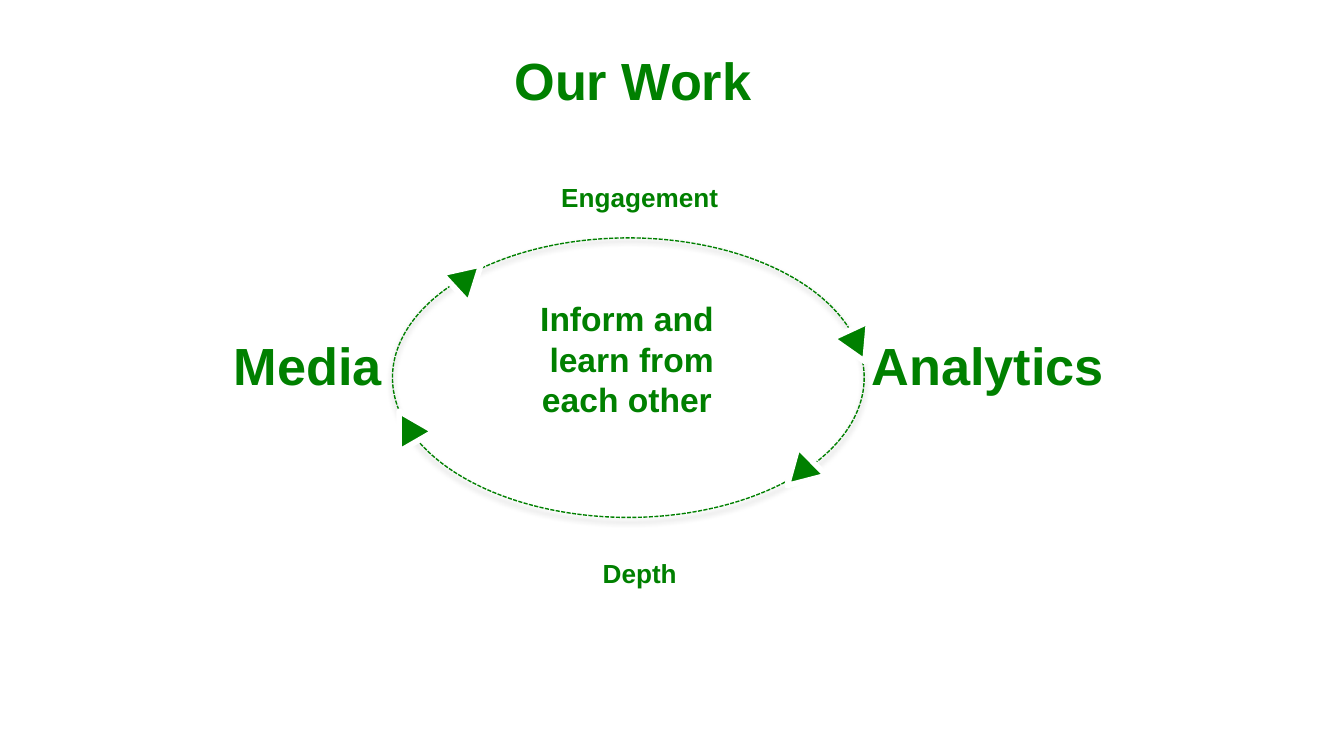
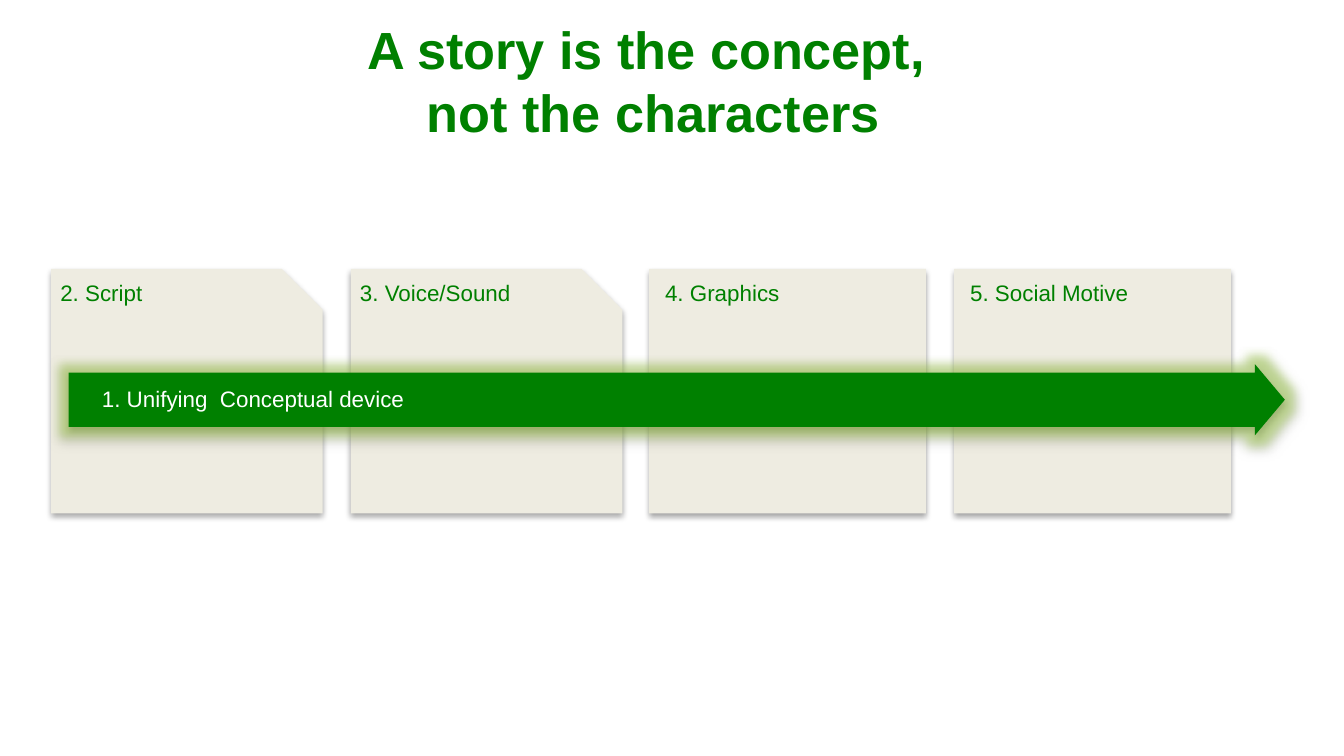
import pptx
import pptx.util
import pptx.dml.color
import pptx.enum.dml
import pptx.enum.shapes
import pptx.enum.text
import pptx.oxml
import pptx.oxml.ns

Inches = pptx.util.Inches
Pt = pptx.util.Pt
RGBColor = pptx.dml.color.RGBColor
SHAPE = pptx.enum.shapes.MSO_SHAPE
ALIGN = pptx.enum.text.PP_ALIGN
ANCHOR = pptx.enum.text.MSO_ANCHOR
AUTO = pptx.enum.text.MSO_AUTO_SIZE

GREEN = RGBColor(0x00, 0x80, 0x00)
WHITE = RGBColor(0xFF, 0xFF, 0xFF)
BEIGE = RGBColor(0xEE, 0xEC, 0xE1)
FONT = "Arial"
TITLE_SIZE = 28
LABEL_W, LABEL_H = 3.12, 1.21

WORK_TITLE = "Our Work"
WORK_LABELS = [
    ("Media", 0.73, 2.22, TITLE_SIZE, 0.28),
    ("Analytics", 5.79, 2.22, TITLE_SIZE, 0.28),
    ("Engagement", 3.2, 0.86, 14, 0.05),
    ("Depth", 3.2, 3.66, 14, 0.05),
]
CENTRE_TEXT = "Inform and \nlearn from\neach other "
CYCLE_HEADS = [
    (5.82, 3.32, 345.5),
    (3.31, 2.0, 167.4),
    (2.95, 3.08, 90),
    (6.17, 2.4, 275.1),
]

STORY_TITLE = "A story is the concept, \nnot the characters"
CARD_STYLES = {
    "snipped": (SHAPE.SNIP_1_RECTANGLE, 2.02, -0.03),
    "plain": (SHAPE.RECTANGLE, 2.06, 0.02),
}
CARDS = [
    ("2. Script", 0.38, "snipped"),
    ("3. Voice/Sound", 2.61, "snipped"),
    ("4. Graphics", 4.83, "plain"),
    ("5. Social Motive", 7.1, "plain"),
]
DEVICE = "1. Unifying  Conceptual device"

SHADOW = ('<a:outerShdw blurRad="40000" dist="23000" dir="5400000" rotWithShape="0">'
          '<a:srgbClr val="000000"><a:alpha val="35000"/></a:srgbClr></a:outerShdw>')
GLOW = ('<a:glow rad="139700"><a:srgbClr val="9BCB3C">'
        '<a:alpha val="45000"/></a:srgbClr></a:glow>')


def add_effects(shape, effects):
    shape.shadow.inherit = False
    effect_list = shape._element.spPr.find(pptx.oxml.ns.qn("a:effectLst"))
    namespace = pptx.oxml.ns.nsdecls("a")
    for effect in pptx.oxml.parse_xml(f"<a:effectLst {namespace}>{effects}</a:effectLst>"):
        effect_list.append(effect)


def add_figure(slide, preset, box, fill=None, effects=""):
    figure = slide.shapes.add_shape(preset, *map(Inches, box))
    if fill is None:
        figure.fill.background()
    else:
        figure.fill.solid()
        figure.fill.fore_color.rgb = fill
    figure.line.fill.background()
    add_effects(figure, effects)
    return figure


def write(shape, text, size, color=GREEN, bold=False, align=ALIGN.LEFT,
          anchor=ANCHOR.TOP, bottom=0.05, auto=AUTO.NONE):
    frame = shape.text_frame
    frame.text = text
    frame.word_wrap = True
    frame.auto_size = auto
    frame.vertical_anchor = anchor
    frame.margin_left = frame.margin_right = Inches(0.1)
    frame.margin_top, frame.margin_bottom = Inches(0.05), Inches(bottom)
    for paragraph in frame.paragraphs:
        paragraph.alignment = align
        for run in paragraph.runs:
            run.font.name = FONT
            run.font.size = Pt(size)
            run.font.bold = bold
            run.font.color.rgb = color


def add_text(slide, text, box, size, **style):
    write(slide.shapes.add_textbox(*map(Inches, box)), text, size, **style)


def add_titled_slide(prs, text, left, width):
    slide = prs.slides.add_slide(prs.slide_layouts[5])
    title = slide.shapes.title
    title.left, title.top = Inches(left), Inches(-0.01)
    title.width, title.height = Inches(width), Inches(LABEL_H)
    write(title, text, TITLE_SIZE, bold=True, align=ALIGN.CENTER, anchor=ANCHOR.MIDDLE)
    return slide


def build_work(prs):
    slide = add_titled_slide(prs, WORK_TITLE, 3.15, LABEL_W)
    for label, left, top, size, bottom in WORK_LABELS:
        add_text(slide, label, (left, top, LABEL_W, LABEL_H), size, bold=True,
                 align=ALIGN.CENTER, anchor=ANCHOR.MIDDLE, bottom=bottom)
    cycle = add_figure(slide, SHAPE.OVAL, (2.92, 1.77, 3.51, 2.08), effects=SHADOW)
    cycle.line.color.rgb = GREEN
    cycle.line.width = Pt(0.75)
    cycle.line.dash_style = pptx.enum.dml.MSO_LINE.SQUARE_DOT
    for left, top, angle in CYCLE_HEADS:
        head = add_figure(slide, SHAPE.ISOSCELES_TRIANGLE, (left, top, 0.3, 0.26), GREEN)
        head.rotation = angle
        head.line.color.rgb = WHITE
        head.line.width = Pt(3)
    add_text(slide, CENTRE_TEXT, (3.13, 2.17, 3.14, 1.01), 18, bold=True,
             align=ALIGN.CENTER, auto=AUTO.SHAPE_TO_FIT_TEXT)


def build_story(prs):
    slide = add_titled_slide(prs, STORY_TITLE, 1.51, 6.7)
    for label, left, style in CARDS:
        preset, width, offset = CARD_STYLES[style]
        add_figure(slide, preset, (left, 2, width, 1.82), BEIGE, SHADOW)
        add_text(slide, label, (left + offset, 2.03, 2.05, 0.3), 12,
                 auto=AUTO.SHAPE_TO_FIT_TEXT)
    arrow = add_figure(slide, SHAPE.RIGHT_ARROW, (0.51, 2.71, 9.05, 0.53), GREEN,
                       GLOW + SHADOW)
    arrow.adjustments[0] = 0.76
    arrow.adjustments[1] = 0.42
    add_text(slide, DEVICE, (0.66, 2.82, 4.61, 0.3), 12, color=WHITE,
             auto=AUTO.SHAPE_TO_FIT_TEXT)


def main():
    prs = pptx.Presentation()
    prs.slide_width = Inches(10)
    prs.slide_height = prs.slide_width * 9 // 16
    build_work(prs)
    build_story(prs)
    prs.save("out.pptx")


if __name__ == "__main__":
    main()
